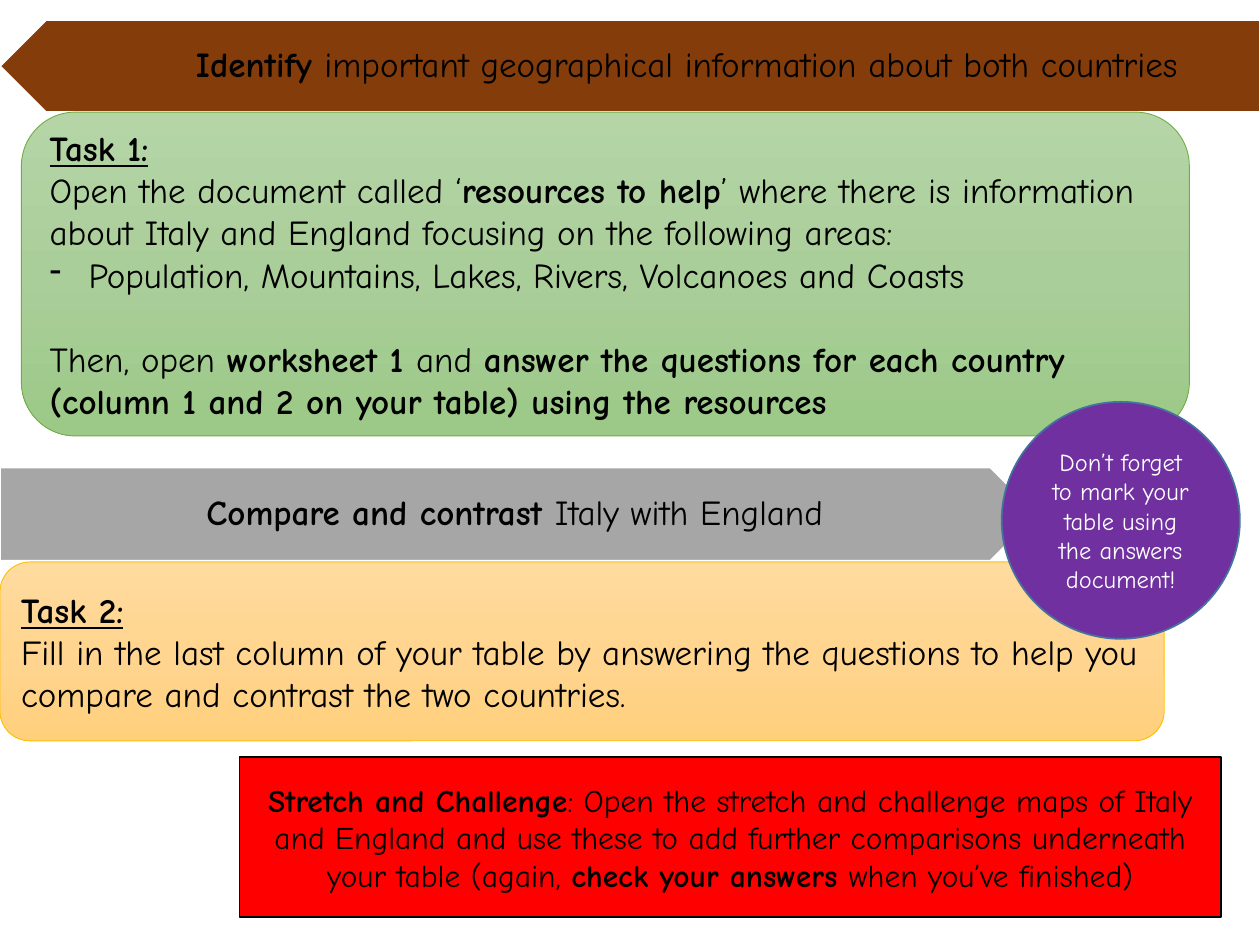
from copy import deepcopy

from lxml.etree import SubElement
from pptx import Presentation
from pptx.dml.color import RGBColor
from pptx.enum.shapes import MSO_SHAPE
from pptx.enum.text import MSO_ANCHOR, PP_ALIGN
from pptx.oxml.ns import qn
from pptx.util import Inches, Pt

WIDTH, HEIGHT = Inches(10), Inches(7.5)
BOLD = {"bold": True}
PLAIN = {"bold": False}
HEADING = {"bold": True, "underline": True}
CENTRED = {"alignment": PP_ALIGN.CENTER}
BANNER = {"alignment": PP_ALIGN.CENTER, "line_spacing": 0.9}


def colour(value):
    return RGBColor.from_string(value)


def apply(target, values):
    for name, value in values.items():
        setattr(target, name, value)


def place(left, top, width, height):
    return (int(WIDTH * left / 100), int(HEIGHT * top / 100),
            int(WIDTH * width / 100), int(HEIGHT * height / 100))


def fill_gradient(box, colours):
    box.fill.gradient()
    box.fill.gradient_angle = 270
    stop_list = box._element.spPr.find(qn("a:gradFill")).find(qn("a:gsLst"))
    stop_list.insert(1, deepcopy(stop_list[0]))
    for index, stop in enumerate(box.fill.gradient_stops):
        stop.position = index / 2
        stop.color.rgb = colour(colours[index])


def add_box(page, kind, area, fills, line, line_width=1):
    box = page.shapes.add_shape(kind, *place(*area))
    box.shadow.inherit = False
    if len(fills) > 1:
        fill_gradient(box, fills)
    else:
        box.fill.solid()
        box.fill.fore_color.rgb = colour(fills[0])
    box.line.color.rgb = colour(line)
    box.line.width = Pt(line_width)
    return box


def write(box, paragraphs, size=20, ink="000000"):
    frame = box.text_frame
    apply(frame, {"word_wrap": True, "vertical_anchor": MSO_ANCHOR.MIDDLE})
    for index, (values, spans) in enumerate(paragraphs):
        para = frame.add_paragraph() if index else frame.paragraphs[0]
        apply(para, {"alignment": PP_ALIGN.LEFT, **values})
        for text, style in spans:
            span = para.add_run()
            span.text = text
            apply(span.font, {"name": "Comic Neue", "size": Pt(size), **style})
            span.font.color.rgb = colour(ink)


def add_dash(para, indent):
    properties = para._p.get_or_add_pPr()
    properties.set("marL", str(indent))
    properties.set("indent", str(-indent))
    SubElement(properties, qn("a:buChar")).set("char", "-")


def add_banner(page, arrow_area, text_area, fill, spans, rotation=0):
    arrow = add_box(page, MSO_SHAPE.PENTAGON, arrow_area, [fill], "FFFFFF")
    arrow.rotation = rotation
    label = page.shapes.add_textbox(*place(*text_area))
    apply(label.text_frame, {
        "margin_left": Inches(0.58), "margin_right": Inches(0.16),
        "margin_top": Inches(0.09), "margin_bottom": Inches(0.09)})
    write(label, [(BANNER, spans)])


def add_task(page, area, fills, line, paragraphs):
    box = add_box(page, MSO_SHAPE.ROUNDED_RECTANGLE, area, fills, line, 0.5)
    write(box, paragraphs)
    return box


def main():
    deck = Presentation()
    apply(deck, {"slide_width": WIDTH, "slide_height": HEIGHT})
    page = deck.slides.add_slide(deck.slide_layouts[6])

    add_banner(page, (0, 2.13, 100, 9.73), (5.8, 2.13, 94.2, 9.73), "843C0B", [
        ("Identify ", BOLD),
        ("important geographical information about both countries ", PLAIN)], 180)

    first_task = add_task(
        page, (1.7, 11.87, 92.7, 34.27), ["B5D5A7", "AACE9A", "9CC987"], "70AD47", [
            ({}, [("Task 1:", HEADING)]),
            ({}, [("Open the document called ‘", PLAIN),
                  ("resources to help", BOLD),
                  ("’ where there is information about Italy and England "
                   "focusing on the following areas:", PLAIN)]),
            ({}, [("Population, Mountains, Lakes, Rivers, Volcanoes and Coasts", PLAIN)]),
            ({"space_before": Pt(24)}, [
                ("Then, open ", PLAIN),
                ("worksheet 1 ", BOLD),
                ("and ", PLAIN),
                ("answer the questions for each country (column 1 and 2 "
                 "on your table) using the resources", BOLD)])])
    add_dash(first_task.text_frame.paragraphs[2], Inches(0.31))

    add_banner(page, (0, 49.47, 82.3, 9.87), (0, 49.47, 77.5, 9.87), "A6A6A6", [
        ("Compare and contrast ", BOLD), ("Italy with England", PLAIN)])

    add_task(page, (0, 59.47, 92.4, 18.93), ["FFDB9E", "FFD590", "FFD07C"], "FFC000", [
        ({}, [("Task 2:", HEADING)]),
        ({}, [("Fill in the last column of your table by answering the questions "
               "to help you compare and contrast the two countries.", PLAIN)])])

    challenge = add_box(page, MSO_SHAPE.FLOWCHART_PROCESS,
                        (19, 80.13, 77.9, 16.93), ["FF0000"], "000000")
    write(challenge, [(CENTRED, [
        ("Stretch and Challenge", BOLD),
        (": Open the stretch and challenge maps of Italy and England and use these "
         "to add further comparisons underneath your table (again, ", PLAIN),
        ("check your answers ", BOLD),
        ("when you’ve finished)", PLAIN)])], 18)

    reminder = add_box(page, MSO_SHAPE.OVAL,
                       (79.5, 42.53, 18.9, 25.07), ["7030A0"], "43739E")
    write(reminder, [(CENTRED, [
        ("Don’t forget to mark your table using the answers document!", PLAIN)])],
        14, "FFFFFF")

    deck.save("out.pptx")


if __name__ == "__main__":
    main()
